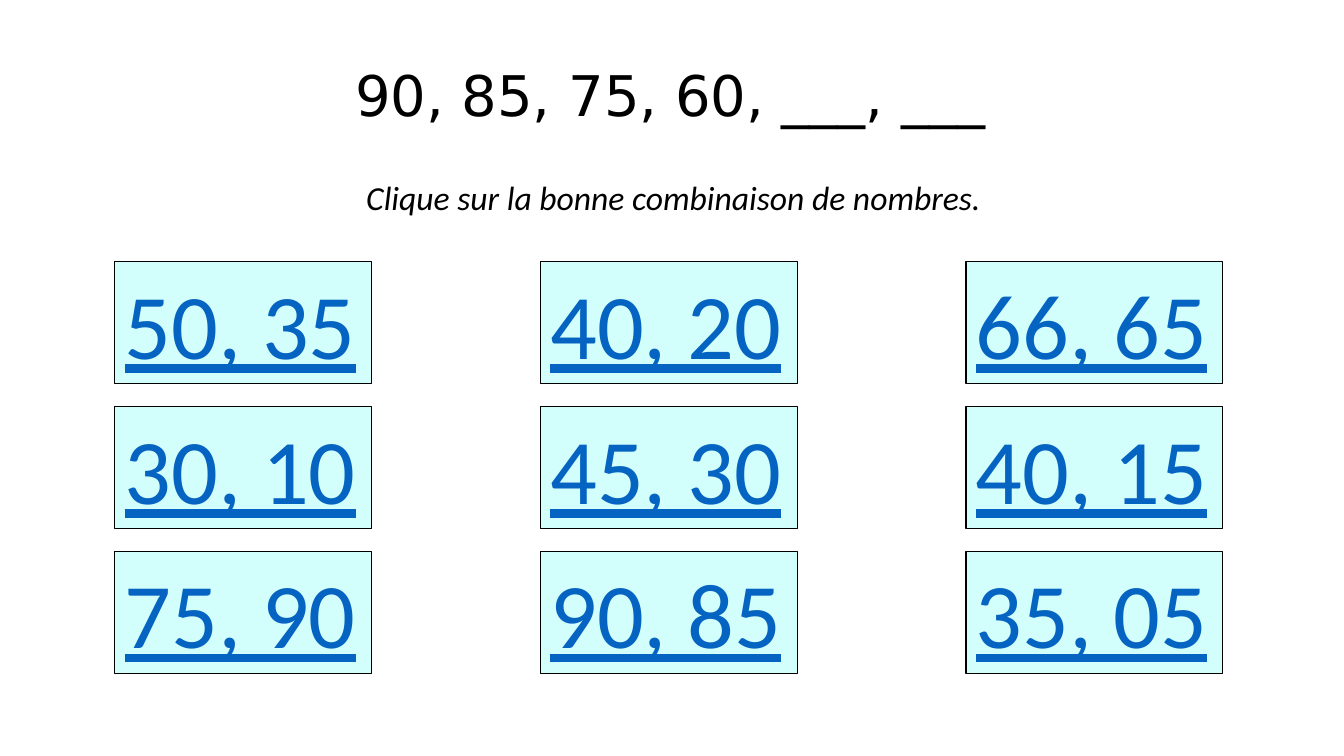
from dataclasses import dataclass

from lxml.etree import SubElement
from pptx import Presentation
from pptx.dml.color import RGBColor
from pptx.enum.shapes import MSO_SHAPE
from pptx.enum.text import MSO_ANCHOR, MSO_AUTO_SIZE, PP_ALIGN
from pptx.oxml.ns import qn
from pptx.util import Pt


@dataclass(frozen=True)
class Theme:
    text: RGBColor = RGBColor(0x00, 0x00, 0x00)
    answer: RGBColor = RGBColor(0x05, 0x63, 0xC1)
    button: RGBColor = RGBColor(0xA7, 0xFF, 0xFB)
    button_opacity: int = 50
    sequence_font: str = "DejaVu Sans"
    body_font: str = "Calibri"
    sequence_size: int = 40
    instruction_size: int = 24
    answer_size: int = 66
    outline: float = 0.75


THEME = Theme()
SEQUENCE = "90, 85, 75, 60, ___, ___"
INSTRUCTION = "Clique sur la bonne combinaison de nombres."
ANSWERS = [
    ["50, 35", "40, 20", "66, 65"],
    ["30, 10", "45, 30", "40, 15"],
    ["75, 90", "90, 85", "35, 05"],
]


def write_text(shape, text, font_name, size, color, alignment):
    frame = shape.text_frame
    frame.text = text
    frame.word_wrap = True
    frame.auto_size = MSO_AUTO_SIZE.NONE
    frame.vertical_anchor = MSO_ANCHOR.TOP
    paragraph = frame.paragraphs[0]
    paragraph.alignment = alignment
    paragraph.space_before = Pt(0)
    font = paragraph.font
    font.name = font_name
    font.size = Pt(size)
    font.color.rgb = color
    return font


def place_heading(placeholder, box, text, font_name, size):
    left, top, width, height = box
    placeholder.left, placeholder.top = Pt(left), Pt(top)
    placeholder.width, placeholder.height = Pt(width), Pt(height)
    return write_text(placeholder, text, font_name, size, THEME.text, PP_ALIGN.CENTER)


def add_answer_button(slide, box, text):
    button = slide.shapes.add_shape(MSO_SHAPE.RECTANGLE, *(Pt(length) for length in box))
    button.shadow.inherit = False
    button.fill.solid()
    button.fill.fore_color.rgb = THEME.button
    color = button.fill._xPr.find(qn("a:solidFill")).find(qn("a:srgbClr"))
    SubElement(color, qn("a:alpha"), val=str(THEME.button_opacity * 1000))
    button.line.color.rgb = THEME.text
    button.line.width = Pt(THEME.outline)
    font = write_text(button, text, THEME.body_font, THEME.answer_size,
                      THEME.answer, PP_ALIGN.LEFT)
    font.underline = True


def add_answer_grid(slide, box, button_width=183.5, button_height=87):
    """Spread the answers evenly so the outer buttons touch the box edges."""
    left, top, width, height = box
    column_step = (width - button_width) / (len(ANSWERS[0]) - 1)
    row_step = (height - button_height) / (len(ANSWERS) - 1)
    for row, answers in enumerate(ANSWERS):
        for column, answer in enumerate(answers):
            add_answer_button(slide, (left + column * column_step, top + row * row_step,
                                      button_width, button_height), answer)


def build_quiz_slide(presentation):
    slide = presentation.slides.add_slide(presentation.slide_layouts[0])
    sequence, instruction = slide.placeholders
    place_heading(sequence, (82, 39.5, 793.5, 55.5), SEQUENCE,
                  THEME.sequence_font, THEME.sequence_size)
    font = place_heading(instruction, (202.5, 123, 557, 36), INSTRUCTION,
                         THEME.body_font, THEME.instruction_size)
    font.italic = True
    add_answer_grid(slide, (82, 187, 791.5, 294))


def main():
    presentation = Presentation()
    presentation.slide_width, presentation.slide_height = Pt(960), Pt(540)
    build_quiz_slide(presentation)
    presentation.save("out.pptx")


if __name__ == "__main__":
    main()
